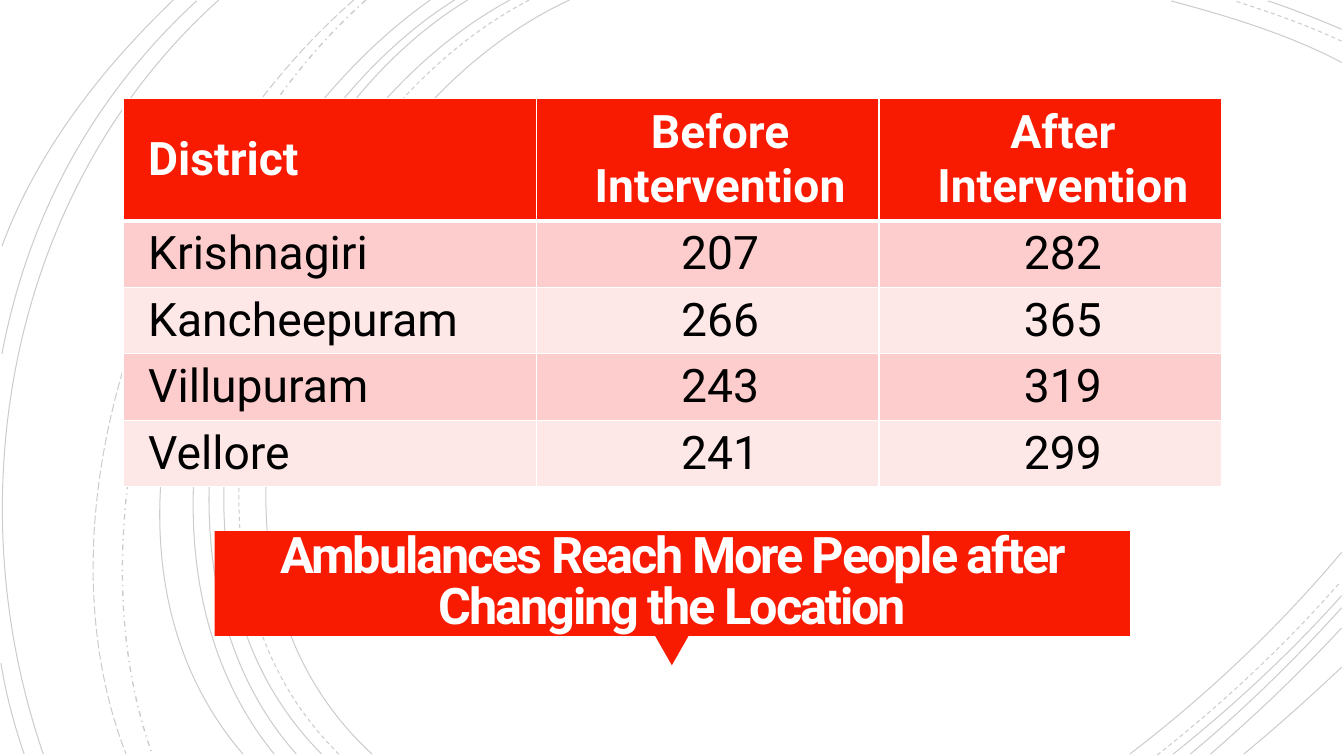
from lxml import etree
from pptx import Presentation
from pptx.dml.color import RGBColor
from pptx.enum.dml import MSO_LINE
from pptx.enum.shapes import MSO_SHAPE
from pptx.enum.text import MSO_ANCHOR, MSO_AUTO_SIZE, PP_ALIGN
from pptx.oxml.ns import qn
from pptx.util import Inches, Pt

RECTANGLE, TRIANGLE = MSO_SHAPE.RECTANGLE, MSO_SHAPE.ISOSCELES_TRIANGLE
CENTER, JUSTIFY = PP_ALIGN.CENTER, PP_ALIGN.JUSTIFY
MIDDLE, NO_FIT = MSO_ANCHOR.MIDDLE, MSO_AUTO_SIZE.NONE
SOLID, DASH = MSO_LINE.SOLID, MSO_LINE.DASH
DASH_DOT, LONG_DASH = MSO_LINE.DASH_DOT, MSO_LINE.LONG_DASH

GRID_COLUMNS, GRID_ROWS = 133.33, 75
FONT = "Roboto"
RED, WHITE, BLACK = "F81B02", "FFFFFF", "000000"
BANDS = ["FCCDCC", "FEE8E7"]

TITLE = "Ambulances Reach More People after Changing the Location"
DISTRICTS = [
    ["District", "Before Intervention", "After Intervention"],
    ["Krishnagiri", "207", "282"],
    ["Kancheepuram", "266", "365"],
    ["Villupuram", "243", "319"],
    ["Vellore", "241", "299"],
]
COLUMN_WIDTHS = [41, 34, 34]
ROW_HEIGHTS = [12.1] + [6.6] * 4

ARCS = [
    (SOLID, 0.75, [
        [(56.5, 0), (31.5, 11.5), (14.3, 54), (36.9, 74.8)],
        [(50.6, 0), (27, 12.7), (11, 53.7), (31.9, 74.8)],
        [(46.4, 0), (24.4, 13.3), (11, 54.1), (29.4, 74.8)],
        [(45.1, 0), (23.1, 13.8), (9.7, 53.3), (27.2, 74.8)],
        [(42.7, 0), (21.7, 14.7), (5.3, 52.9), (24.1, 74.8)],
        [(21.7, 0), (1.1, 18.5), (-4.6, 49), (4.3, 74.8)],
        [(19.5, 0.1), (9.2, 9.6), (2.8, 21.4), (0.2, 35.1)],
        [(17.2, 0), (10, 6.9), (3.7, 15), (0.2, 24.4)],
        [(0.1, 65.8), (0.6, 68.9), (1.4, 71.9), (2.4, 74.8)],
        [(133.1, 6.2), (127.8, 3.4), (121.8, 1.6), (116.2, 0.1)],
        [(133.1, 2.9), (130.7, 1.9), (128.3, 0.9), (125.8, 0.1)],
        [(112.1, 74.8), (119.7, 69), (126.9, 62.2), (133.1, 54.8)],
        [(116.4, 74.8), (122.3, 70.1), (128, 64.8), (133.1, 59.1)],
        [(118.1, 74.8), (123.4, 70.4), (128.4, 65.5), (133.1, 60.3)],
        [(120.1, 74.8), (124.6, 70.9), (129, 66.7), (133.1, 62.3)],
        [(123.4, 74.8), (126.7, 72.1), (129.9, 69.2), (133.1, 66.2)],
    ]),
    (DASH, 0.75, [
        [(52.5, 0), (28.5, 12.5), (12.3, 53.7), (33.6, 74.8)],
        [(133.1, 4.1), (129.7, 2.5), (126, 1.2), (122.5, 0.1)],
        [(114.8, 74.9), (121.3, 69.8), (127.5, 64), (133, 57.7)],
    ]),
    (DASH_DOT, 1, [[(36.3, 0), (17.6, 16.6), (6.5, 50.9), (15.1, 74.8)]]),
    (LONG_DASH, 0.75, [[(35.1, 0), (15.7, 16.9), (2.9, 49.9), (12.5, 74.8)]]),
]


def grid(*steps):
    """Turn grid steps of a tenth of an inch into slide lengths."""
    return [Inches(step / 10) for step in steps]


def paint(color_format, color):
    """Set a colour format to a hex colour."""
    color_format.rgb = RGBColor.from_string(color)


def fill_solid(target, color):
    """Fill a shape or a cell with one hex colour."""
    target.fill.solid()
    paint(target.fill.fore_color, color)


def add_span(para, text, size, color, bold):
    """Add one formatted run to a paragraph."""
    span = para.add_run()
    span.text = text
    span.font.name, span.font.size, span.font.bold = FONT, Pt(size), bold
    paint(span.font.color, color)
    return span


def add_arc(group, points, dash, width):
    """Draw a faint cubic curve through its end and control points."""
    start, *rest = [grid(*point) for point in points]
    builder = group.shapes.build_freeform(*start)
    builder.add_line_segments(rest, close=False)
    arc = builder.convert_to_shape()
    outline = next(arc.element.iter(qn("a:path")))
    curve = etree.SubElement(outline, qn("a:cubicBezTo"))
    for segment in outline.findall(qn("a:lnTo")):
        curve.append(segment[0])
        outline.remove(segment)
    arc.shadow.inherit = False
    arc.fill.background()
    paint(arc.line.color, BLACK)
    arc.line.width, arc.line.dash_style = Pt(width), dash
    tint = next(arc.line._get_or_add_ln().iter(qn("a:srgbClr")))
    etree.SubElement(tint, qn("a:alpha"), val="20000")


def add_block(page, kind, area, rotation=0):
    """Add a plain red shape over an area of the grid."""
    block = page.shapes.add_shape(kind, *grid(*area))
    block.shadow.inherit = False
    block.rotation = rotation
    fill_solid(block, RED)
    block.line.fill.background()


def place_title(page, area):
    """Move the title placeholder to the front and write the headline."""
    title = page.shapes.title
    title.left, title.top, title.width, title.height = grid(*area)
    title.element.getparent().append(title.element)
    frame = title.text_frame
    frame.word_wrap, frame.auto_size = True, NO_FIT
    frame.vertical_anchor = MIDDLE
    frame.margin_left = frame.margin_right = Inches(0.25)
    frame.margin_top = frame.margin_bottom = Inches(0.25)
    para = frame.paragraphs[0]
    para.alignment, para.line_spacing = CENTER, 0.85
    span = add_span(para, TITLE, 36, WHITE, True)
    span._r.get_or_add_rPr().set("spc", "-150")


def add_borders(cell, top, bottom):
    """Give a cell white borders with the given top and bottom widths."""
    properties = cell._tc.get_or_add_tcPr()
    for side, width in (("L", 1), ("R", 1), ("T", top), ("B", bottom)):
        line = etree.SubElement(properties, qn(f"a:ln{side}"), w=str(Pt(width)))
        solid = etree.SubElement(line, qn("a:solidFill"))
        etree.SubElement(solid, qn("a:srgbClr"), val=WHITE)


def fill_cell(cell, text, row, column):
    """Format one table cell by its row and column."""
    header = row == 0
    add_borders(cell, 3 if row == 1 else 1, 3 if header else 1)
    fill_solid(cell, RED if header else BANDS[(row - 1) % 2])
    cell.margin_left = Inches(0.25)
    cell.margin_right = cell.margin_top = cell.margin_bottom = 0
    cell.vertical_anchor = MIDDLE
    para = cell.text_frame.paragraphs[0]
    para.alignment = CENTER if column else JUSTIFY
    add_span(para, text, 33, WHITE if header else BLACK, header)


def add_district_table(page, left, top):
    """Add the table of counts before and after the intervention."""
    area = grid(left, top, sum(COLUMN_WIDTHS), sum(ROW_HEIGHTS))
    table = page.shapes.add_table(len(ROW_HEIGHTS), len(COLUMN_WIDTHS), *area).table
    for column, width in zip(table.columns, grid(*COLUMN_WIDTHS)):
        column.width = width
    for row, height in zip(table.rows, grid(*ROW_HEIGHTS)):
        row.height = height
    for row, texts in enumerate(DISTRICTS):
        for column, text in enumerate(texts):
            fill_cell(table.cell(row, column), text, row, column)


def main():
    """Build the slide and save the deck."""
    deck = Presentation()
    deck.slide_width, deck.slide_height = grid(GRID_COLUMNS, GRID_ROWS)
    page = deck.slides.add_slide(deck.slide_layouts[5])
    backdrop = page.shapes.add_group_shape()
    for dash, width, curves in ARCS:
        for points in curves:
            add_arc(backdrop, points, dash, width)
    add_block(page, TRIANGLE, (65, 63.1, 3.3, 2.9), rotation=180)
    add_block(page, RECTANGLE, (21.3, 52.7, 90.8, 10.4))
    place_title(page, (22.2, 53.7, 89, 8.4))
    add_district_table(page, 12.2, 9.8)
    deck.save("out.pptx")


if __name__ == "__main__":
    main()
